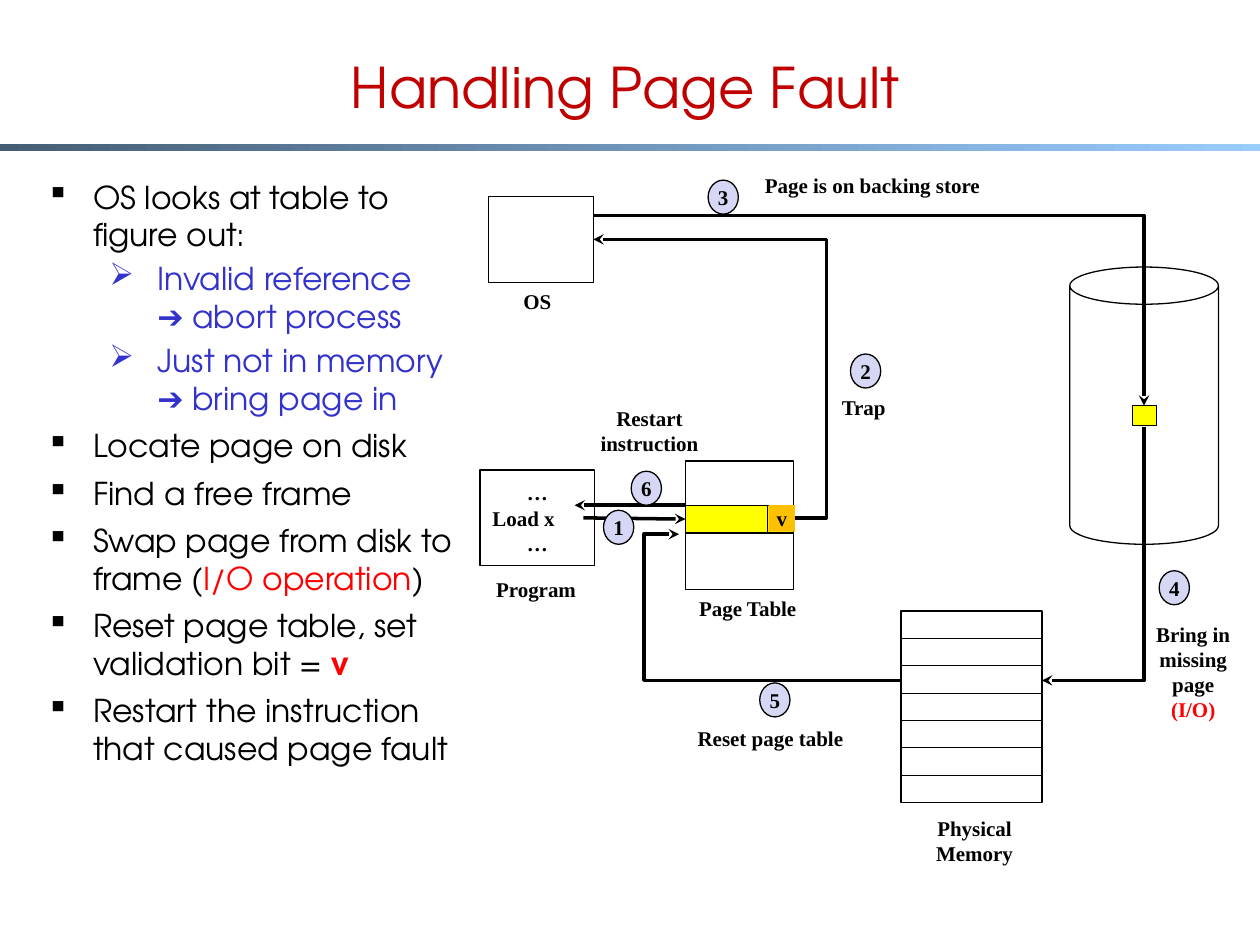
from lxml import etree
from pptx import Presentation
from pptx.dml.color import RGBColor
from pptx.enum import shapes, text
from pptx.oxml import ns
from pptx.util import Inches, Pt

BLACK = RGBColor(0, 0, 0)
WHITE = RGBColor(255, 255, 255)
RED = RGBColor(255, 0, 0)
BLUE = RGBColor(0x33, 0x33, 0xCC)
YELLOW = RGBColor(255, 255, 0)
ORANGE = RGBColor(0xFF, 0xC0, 0)
LILAC = RGBColor(0xD6, 0xD6, 0xF5)
CRIMSON = RGBColor(0xC0, 0, 0)
SLATE = RGBColor(0x46, 0x5E, 0x75)
SKY = RGBColor(0x99, 0xCC, 0xFF)
SANS, SERIF = "TeX Gyre Adventor", "Times New Roman"
KIND, LINK = shapes.MSO_SHAPE, shapes.MSO_CONNECTOR
MID, LEFT = text.PP_ALIGN.CENTER, text.PP_ALIGN.LEFT

TITLE = "Handling Page Fault"
POINTS = [
    (0, [("OS looks at table to figure out:", BLACK, False)]),
    (1, [("Invalid reference \v➔ abort process", BLUE, False)]),
    (1, [("Just not in memory ➔ bring page in", BLUE, False)]),
    (0, [("Locate page on disk", BLACK, False)]),
    (0, [("Find a free frame", BLACK, False)]),
    (0, [("Swap page from disk to frame (", BLACK, False),
         ("I/O operation", RED, False), (")", BLACK, False)]),
    (0, [("Reset page table, set validation bit = ", BLACK, False),
         ("v", RED, True)]),
    (0, [("Restart the instruction that caused page fault", BLACK, False)]),
]
LEVELS = [("▪", 0.37, -0.37, 5.4, "000000"), ("➢", 0.88, -0.38, 3.6, "3333CC")]
LABELS = [
    ("OS", 3.82, 2.24, 0.89, 0.3),
    ("Program", 3.72, 4.53, 1.07, 0.3),
    ("Page Table", 5.4, 4.68, 1.07, 0.3),
    ("Physical Memory", 7.2, 6.42, 1.07, 0.5),
    ("Trap", 6.51, 3.08, 0.69, 0.3),
    ("Page is on backing store", 5.87, 1.32, 2.11, 0.3),
    ("Bring in missing page\n(I/O)", 9.03, 4.88, 0.88, 0.91),
    ("Reset page table", 5.39, 5.71, 1.45, 0.3),
    ("Restart instruction", 4.56, 3.17, 1.19, 0.5),
]
STEPS = [("1", 4.79, 4.05), ("2", 6.75, 2.81), ("3", 5.62, 1.43),
         ("4", 9.2, 4.53), ("5", 6.03, 5.42), ("6", 5.01, 3.74)]
BENDS = [
    ("bentConnector3", (6.31, 4.11, 4.71, 1.9), 0, -15600),
    ("bentConnector2", (4.71, 1.71, 9.08, 3.22), 0, None),
    ("bentConnector2", (7.67, 3.99, 9.68, 4.8), 90, None),
    ("bentConnector3", (7.15, 5.4, 5.39, 4.24), 0, 115900),
]
FRAMES, FRAME_TOP, FRAME_STEP = 7, 4.85, 0.217


def node(parent, tag, **attrs):
    return etree.SubElement(parent, ns.qn(tag), attrs)


def style(run, font, size, color, bold):
    run.font.name, run.font.size = font, Pt(size)
    run.font.color.rgb, run.font.bold = color, bold


def write(frame, words, align=MID):
    frame.word_wrap = True
    frame.text = words
    for para in frame.paragraphs:
        para.alignment = align
        for run in para.runs:
            style(run, SERIF, 12, RED if run.text == "(I/O)" else BLACK, True)


def draw(kind, x, y, w, h, fill=None, edge=True, words=None, inset=0):
    shape = slide.shapes.add_shape(kind, *map(Inches, (x, y, w, h)))
    shape.shadow.inherit = False
    if fill is None:
        shape.fill.background()
    else:
        shape.fill.solid()
        shape.fill.fore_color.rgb = fill
    if edge:
        shape.line.color.rgb, shape.line.width = BLACK, Pt(0.75)
    else:
        shape.line.fill.background()
    if words:
        frame = shape.text_frame
        frame.margin_left = frame.margin_right = Inches(inset)
        frame.margin_top = frame.margin_bottom = Inches(inset / 2)
        frame.vertical_anchor = text.MSO_ANCHOR.MIDDLE
        write(frame, words)
    return shape


def wire(kind, ends, width=2, arrow=True):
    line = slide.shapes.add_connector(kind, *map(Inches, ends))
    line.line.color.rgb, line.line.width = BLACK, Pt(width)
    if arrow:
        node(line.line._get_or_add_ln(), "a:tailEnd", type="stealth")
    node(line._element.spPr, "a:effectLst")
    return line


def bend(preset, ends, turn, adjust):
    line = wire(LINK.ELBOW, ends)
    line.rotation = turn
    shape = line._element.spPr.find(ns.qn("a:prstGeom"))
    shape.set("prst", preset)
    if adjust is not None:
        guides = shape.find(ns.qn("a:avLst"))
        if guides is None:
            guides = node(shape, "a:avLst")
        node(guides, "a:gd", name="adj1", fmla=f"val {adjust}")


def add_text(x, y, w, h):
    frame = slide.shapes.add_textbox(*map(Inches, (x, y, w, h))).text_frame
    frame.word_wrap = True
    return frame


def add_points():
    frame = add_text(0.27, 1.36, 3.49, 5.51)
    for i, (level, parts) in enumerate(POINTS):
        para = frame.add_paragraph() if i else frame.paragraphs[0]
        mark, indent, hang, space, color = LEVELS[level]
        para.level, para.space_before = level, Pt(space)
        props = para._p.get_or_add_pPr()
        props.set("marL", str(Inches(indent)))
        props.set("indent", str(Inches(hang)))
        node(node(props, "a:buClr"), "a:srgbClr", val=color)
        node(props, "a:buChar", char=mark)
        for j, (words, tint, bold) in enumerate(parts):
            if j:
                para.add_run().text = words
            else:
                para.text = words
            for run in para.runs[j:]:
                style(run, SANS, 18, tint, bold)


deck = Presentation()
deck.slide_width, deck.slide_height = Inches(10), Inches(7.5)
slide = deck.slides.add_slide(deck.slide_layouts[5])

title = slide.shapes.title
title.left, title.top, title.width, title.height = map(Inches, (0.58, 0.15, 8.77, 1.06))
title.text_frame.text = TITLE
title.text_frame.vertical_anchor = text.MSO_ANCHOR.MIDDLE
title.text_frame.paragraphs[0].alignment = MID
style(title.text_frame.paragraphs[0].runs[0], SANS, 32, CRIMSON, False)

rule = draw(KIND.RECTANGLE, 0, 1.14, 10, 0.06, edge=False)
rule.fill.gradient()
rule.fill.gradient_angle = 0
for stop, color in zip(rule.fill.gradient_stops, (SLATE, SKY)):
    stop.color.rgb = color

program = draw(KIND.RECTANGLE, 3.81, 3.73, 0.91, 0.76, words="…\nLoad x\n…", inset=0.1)
program.text_frame.paragraphs[1].alignment = LEFT
draw(KIND.RECTANGLE, 3.88, 1.56, 0.83, 0.68, WHITE)
draw(KIND.CAN, 8.49, 2.12, 1.18, 2.2)
draw(KIND.RECTANGLE, 8.99, 3.22, 0.19, 0.16, YELLOW)
draw(KIND.RECTANGLE, 5.44, 3.66, 0.86, 1.02)
entry = draw(KIND.RECTANGLE, 5.44, 4.01, 0.86, 0.22, YELLOW)
for i in range(FRAMES):
    draw(KIND.RECTANGLE, 7.15, FRAME_TOP + i * FRAME_STEP, 1.12, 0.22, WHITE)

wire(LINK.STRAIGHT, (4.63, 4.11, 5.44, 4.12)).end_connect(entry, 1)
wire(LINK.STRAIGHT, (5.44, 4.01, 4.56, 4.01))
for item in BENDS:
    bend(*item)
for words, x, y in STEPS:
    draw(KIND.OVAL, x, y, 0.24, 0.27, LILAC, words=words)
draw(KIND.RECTANGLE, 6.1, 4.01, 0.21, 0.21, ORANGE, edge=False, words="v")
wire(LINK.STRAIGHT, (6.09, 4.01, 6.09, 4.22), 0.75, False)
for words, *place in LABELS:
    write(add_text(*place), words)
add_points()

deck.save("out.pptx")
